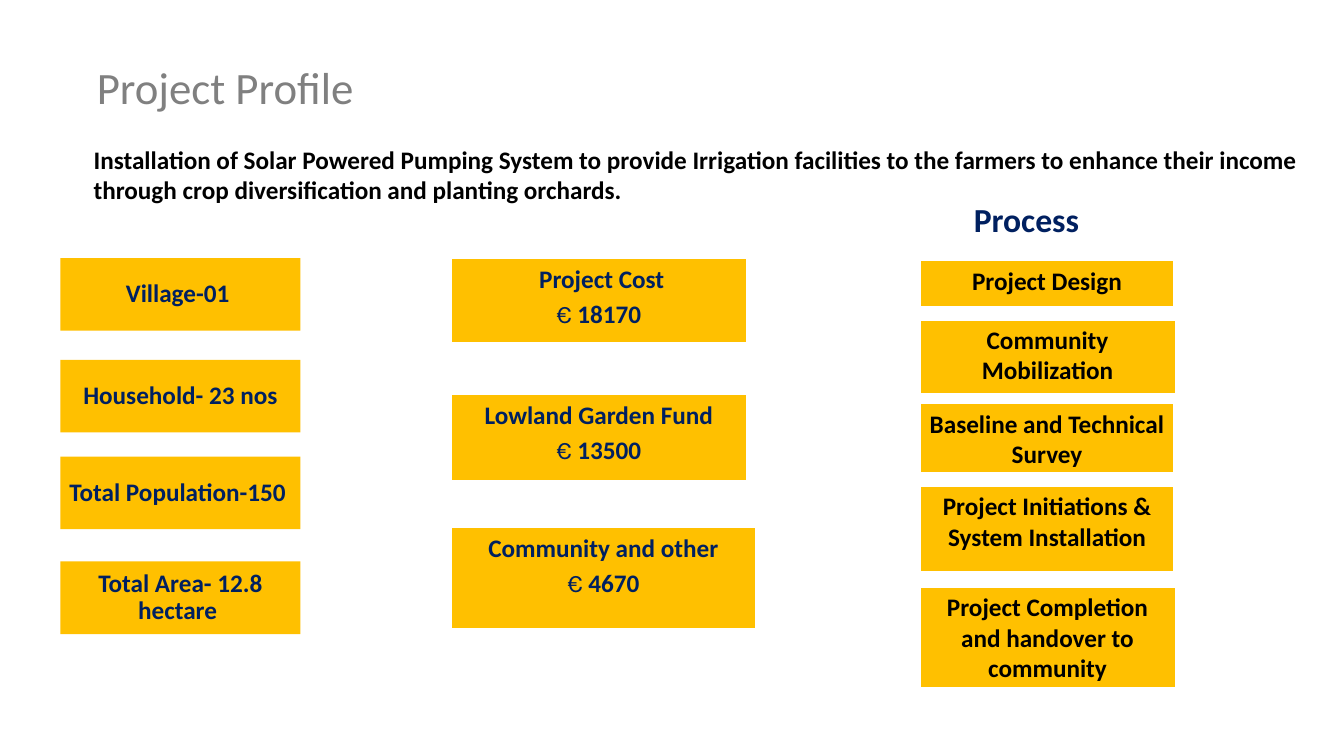
from pptx import Presentation
from pptx.dml.color import RGBColor
from pptx.enum.shapes import MSO_SHAPE as SHAPE
from pptx.enum.text import MSO_ANCHOR as ANCHOR, PP_ALIGN as ALIGN
from pptx.util import Inches, Pt

AMBER = RGBColor(0xFF, 0xC0, 0x00)
NAVY = RGBColor(0x00, 0x20, 0x60)
BLACK = RGBColor(0x00, 0x00, 0x00)
GREY = RGBColor(0x80, 0x80, 0x80)
WHITE = RGBColor(0xFF, 0xFF, 0xFF)

# Fact, top
VILLAGE_FACTS = [
    ("Village-01 ", 2.56),
    ("Household- 23 nos", 3.57),
    ("Total Population-150 ", 4.53),
    ("Total Area- 12.8 hectare ", 5.57),
]
# Source, amount, top, width, height
FUNDING = [
    (" Project Cost", "18170", 2.56, 2.94, 0.84),
    ("Lowland Garden Fund", "13500", 3.91, 2.94, 0.86),
    ("Community and other", "4670", 5.23, 3.03, 1.01),
]
# Step, top, width, height
PROCESS_STEPS = [
    ("Project Design", 2.58, 2.53, 0.47),
    ("Community Mobilization", 3.17, 2.54, 0.74),
    ("Baseline and Technical Survey", 4, 2.53, 0.69),
    ("Project Initiations & System Installation", 4.82, 2.53, 0.86),
    ("Project Completion and handover to community", 5.82, 2.54, 1.01),
]


def write(paragraph, text, size=18, color=NAVY, bold=True, font="Calibri",
          align=ALIGN.CENTER):
    paragraph.alignment = align
    run = paragraph.add_run()
    run.text = text
    run.font.name = font
    run.font.size = Pt(size)
    run.font.bold = bold
    run.font.color.rgb = color


def set_frame(shape, anchor=ANCHOR.TOP, side=0.1, edge=0.05, wrap=True):
    frame = shape.text_frame
    frame.word_wrap = wrap
    frame.vertical_anchor = anchor
    frame.margin_left = frame.margin_right = Inches(side)
    frame.margin_top = frame.margin_bottom = Inches(edge)
    return frame


def add_card(slide, left, top, width, height, outlined=True):
    card = slide.shapes.add_shape(SHAPE.RECTANGLE, Inches(left), Inches(top),
                                  Inches(width), Inches(height))
    card.shadow.inherit = False
    card.fill.solid()
    card.fill.fore_color.rgb = AMBER
    if outlined:
        card.line.color.rgb = WHITE
        card.line.width = Pt(1.5)
    else:
        card.line.fill.background()
    return card


def add_label(slide, text, left, top, width, height, wrap=True, **style):
    label = slide.shapes.add_textbox(Inches(left), Inches(top),
                                     Inches(width), Inches(height))
    write(set_frame(label, wrap=wrap).paragraphs[0], text,
          align=ALIGN.LEFT, **style)


def add_heading(slide, left, top, width, height):
    title = slide.shapes.title
    title.left, title.top = Inches(left), Inches(top)
    title.width, title.height = Inches(width), Inches(height)
    frame = set_frame(title, side=0.13, edge=0.07)
    write(frame.paragraphs[0], "Project Profile", size=32, color=GREY,
          bold=False, align=ALIGN.LEFT)
    add_label(slide, "Installation of Solar Powered Pumping System to provide "
              "Irrigation facilities to the farmers to enhance their income "
              "through crop diversification and planting orchards.",
              left, top + 0.86, 12.26, 0.71, color=BLACK)


def add_village_facts(slide, left, width, height):
    for fact, top in VILLAGE_FACTS:
        card = add_card(slide, left, top, width, height, outlined=False)
        frame = set_frame(card, ANCHOR.MIDDLE, side=0.01, edge=0.01)
        frame.paragraphs[0].line_spacing = 0.9
        write(frame.paragraphs[0], fact)


def add_funding(slide, left):
    for source, amount, top, width, height in FUNDING:
        frame = set_frame(add_card(slide, left, top, width, height))
        write(frame.paragraphs[0], source)
        amount_line = frame.add_paragraph()
        amount_line.space_before = Pt(3.6)
        write(amount_line, "€", bold=False, font="Karla")
        write(amount_line, " " + amount)


def add_process(slide, left, top):
    add_label(slide, "Process", left + 0.44, top, 1.26, 0.5, wrap=False, size=24)
    for step, step_top, width, height in PROCESS_STEPS:
        frame = set_frame(add_card(slide, left, step_top, width, height))
        write(frame.paragraphs[0], step, color=BLACK)


def main():
    deck = Presentation()
    deck.slide_width, deck.slide_height = Inches(13.33), Inches(7.5)
    slide = deck.slides.add_slide(deck.slide_layouts[5])
    add_heading(slide, 0.83, 0.52, 9.67, 0.74)
    add_village_facts(slide, left=0.6, width=2.38, height=0.72)
    add_funding(slide, left=4.47)
    add_process(slide, left=9.12, top=1.92)
    deck.save("out.pptx")


if __name__ == "__main__":
    main()
